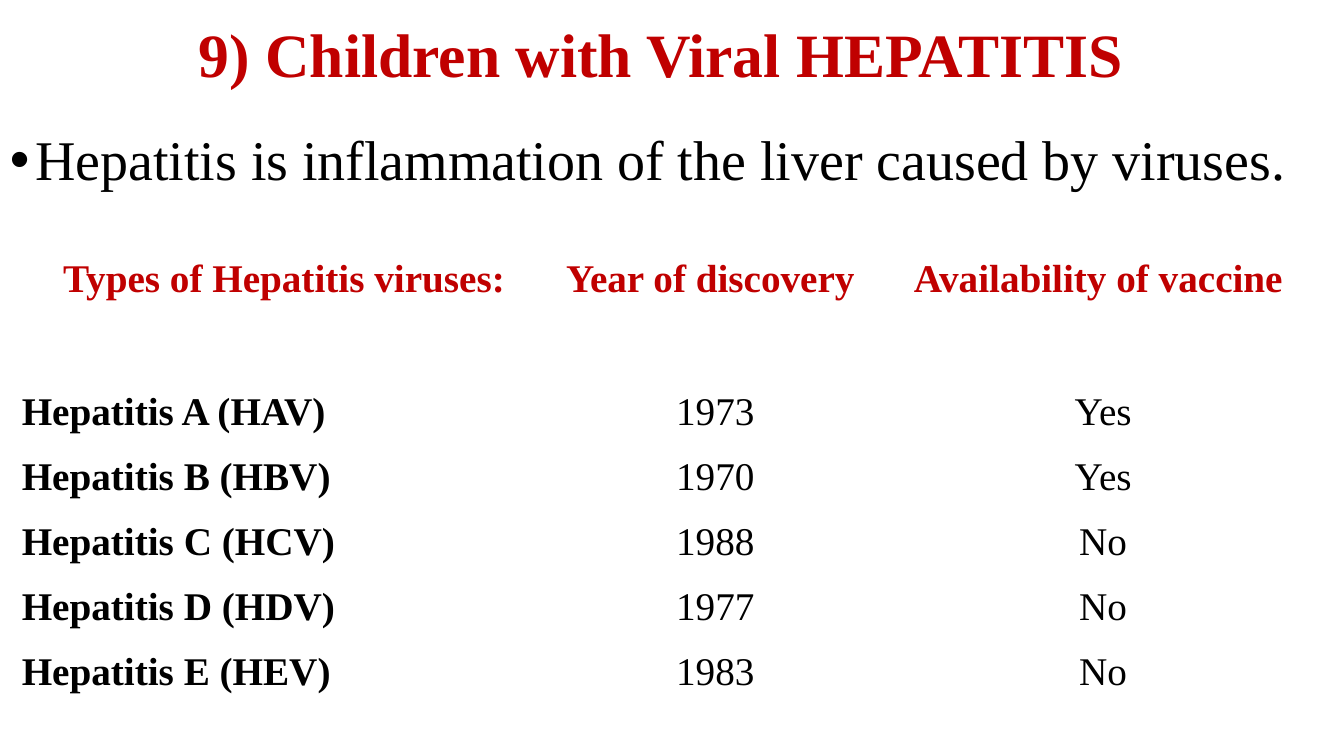
from dataclasses import dataclass

from lxml import etree
from pptx import Presentation
from pptx import util as u
from pptx.dml.color import RGBColor
from pptx.enum import text
from pptx.oxml import ns


@dataclass(frozen=True)
class Theme:
    font: str = "Times New Roman"
    accent: str = "C00000"
    ink: str = "000000"
    paper: str = "FFFFFF"
    title_size: int = 44
    body_size: int = 40
    table_size: int = 28


class SlideBuilder:
    def __init__(self, slide, theme):
        self.slide = slide
        self.theme = theme

    def format_paragraph(self, paragraph, size, color, bold, align, spacing):
        paragraph.alignment = align
        paragraph.line_spacing = spacing
        for run in paragraph.runs:
            run.font.name = self.theme.font
            run.font.size = u.Pt(size)
            run.font.bold = bold
            run.font.color.rgb = RGBColor.from_string(color)

    def text_box(self, wording, box, size, color, bold=False,
                 align=text.PP_ALIGN.LEFT, anchor=text.MSO_ANCHOR.TOP):
        frame = self.slide.shapes.add_textbox(*map(u.Cm, box)).text_frame
        frame.word_wrap = True
        frame.vertical_anchor = anchor
        frame.text = wording
        self.format_paragraph(frame.paragraphs[0], size, color, bold, align, 0.9)
        return frame.paragraphs[0]

    def bullet(self, wording, box):
        paragraph = self.text_box(wording, box, self.theme.body_size, self.theme.ink)
        paragraph.space_before = u.Pt(10)
        properties = paragraph._p.get_or_add_pPr()
        indent = u.Cm(0.64)
        properties.set("marL", str(indent))
        properties.set("indent", str(-indent))
        font = etree.SubElement(properties, ns.qn("a:buFont"))
        font.set("typeface", "Arial")
        etree.SubElement(properties, ns.qn("a:buChar")).set("char", "•")

    def cell(self, cell, lines, color, bold, align):
        cell.fill.solid()
        cell.fill.fore_color.rgb = RGBColor.from_string(self.theme.paper)
        cell.margin_left = cell.margin_right = u.Cm(0.19)
        cell.margin_top = cell.margin_bottom = 0
        cell.text_frame.text = "\n".join(lines)
        for paragraph in cell.text_frame.paragraphs:
            self.format_paragraph(paragraph, self.theme.table_size, color, bold, align, 1.5)

    def table(self, columns, left, top, widths, heights):
        table = self.slide.shapes.add_table(
            len(heights), len(widths), u.Cm(left), u.Cm(top),
            u.Cm(sum(widths)), u.Cm(sum(heights))).table
        for row, height in zip(table.rows, heights):
            row.height = u.Cm(height)
        for index, (heading, lines) in enumerate(columns.items()):
            table.columns[index].width = u.Cm(widths[index])
            is_name = index == 0
            align = text.PP_ALIGN.LEFT if is_name else text.PP_ALIGN.CENTER
            self.cell(table.cell(0, index), [heading], self.theme.accent, True,
                      text.PP_ALIGN.CENTER)
            self.cell(table.cell(1, index), lines, self.theme.ink, is_name, align)


def main():
    deck = Presentation()
    deck.slide_width, deck.slide_height = u.Cm(33.87), u.Cm(19.05)
    theme = Theme()
    builder = SlideBuilder(deck.slides.add_slide(deck.slide_layouts[6]), theme)

    # Title
    builder.text_box("9) Children with Viral HEPATITIS", (2.06, 0.05, 29.21, 2.79),
                     theme.title_size, theme.accent, bold=True,
                     align=text.PP_ALIGN.CENTER, anchor=text.MSO_ANCHOR.MIDDLE)

    # Definition
    builder.bullet("Hepatitis is inflammation of the liver caused by viruses.",
                   (0, 3.2, 33.87, 2.39))

    # Virus types, one table column per entry
    viruses = {
        "Types of Hepatitis viruses:": [f"Hepatitis {kind} (H{kind}V)" for kind in "ABCDE"],
        "Year of discovery ": ["1973", "1970", "1988", "1977", "1983"],
        "Availability of vaccine ": ["Yes", "Yes", "No", "No", "No"],
    }
    builder.table(viruses, left=0.36, top=5.94,
                  widths=(13.59, 8.15, 11.4), heights=(3.35, 8.71))

    deck.save("out.pptx")


if __name__ == "__main__":
    main()
